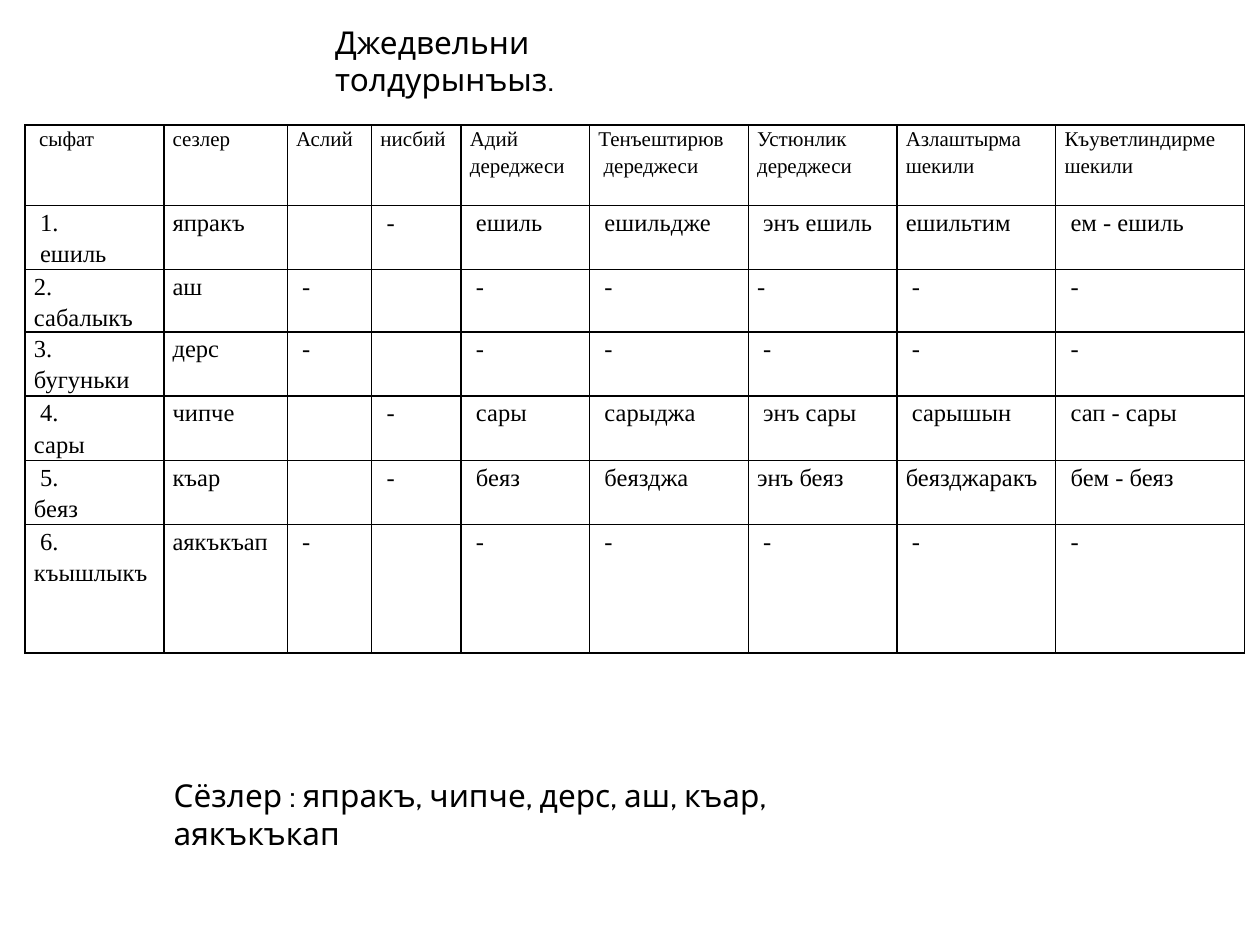
from lxml import etree
from pptx import Presentation
from pptx.dml.color import RGBColor
from pptx.enum.text import MSO_ANCHOR, MSO_AUTO_SIZE, PP_ALIGN
from pptx.oxml.ns import qn
from pptx.util import Inches, Pt

BLACK = RGBColor(0, 0, 0)
LEFT, TOP = PP_ALIGN.LEFT, MSO_ANCHOR.TOP
NO_AUTOFIT = MSO_AUTO_SIZE.NONE
PROMPT_FONT, TABLE_FONT = "Cabin", "Times New Roman"

COLUMN_WIDTHS = [1.1, 0.98, 0.67, 0.71, 1.02, 1.26, 1.18, 1.26, 1.5]
ROW_HEIGHTS = [0.64, 0.51, 0.49, 0.51, 0.51, 0.51, 1.02]
ADJECTIVE_ROWS = [
    [" сыфат", "сезлер", "Аслий", "нисбий", "Адий дереджеси",
     "Тенъештирюв\n дереджеси", "Устюнлик\nдереджеси",
     "Азлаштырма\nшекили", "Къуветлиндирме\nшекили"],
    [" 1.\n ешиль", "япракъ", "", " -", " ешиль", " ешильдже",
     " энъ ешиль", "ешильтим", " ем - ешиль"],
    ["2.\nсабалыкъ", "аш", " -", "", " -", " -", "-", " -", " -"],
    ["3.\nбугуньки", "дерс", " -", "", " -", " -", " -", " -", " -"],
    [" 4.\nсары", "чипче", "", " -", " сары", " сарыджа",
     " энъ сары", " сарышын", " сап - сары"],
    [" 5.\nбеяз", "къар", "", " -", " беяз", " беязджа",
     "энъ беяз", "беязджаракъ", " бем - беяз"],
    [" 6.\nкъышлыкъ", "аякъкъап", " -", "", " -", " -", " -", " -", " -"],
]


def style_paragraph(paragraph, font_name, size):
    paragraph.alignment = LEFT
    paragraph.font.name = font_name
    paragraph.font.size = Pt(size)
    paragraph.font.color.rgb = BLACK


def write_prompt(shape, text):
    frame = shape.text_frame
    frame.text = text
    frame.word_wrap = True
    frame.auto_size = NO_AUTOFIT
    frame.vertical_anchor = TOP
    style_paragraph(frame.paragraphs[0], PROMPT_FONT, 18)


def add_borders(cell):
    properties = cell._tc.get_or_add_tcPr()
    for side in ("a:lnL", "a:lnR", "a:lnT", "a:lnB"):
        line = etree.SubElement(properties, qn(side), w=str(Pt(1)))
        fill = etree.SubElement(line, qn("a:solidFill"))
        etree.SubElement(fill, qn("a:srgbClr"), val=str(BLACK))


def fill_cell(cell, text, size):
    cell.text = text
    cell.margin_left = cell.margin_right = Inches(0.07)
    cell.margin_top = cell.margin_bottom = 0
    add_borders(cell)
    cell.fill.background()
    for paragraph in cell.text_frame.paragraphs:
        style_paragraph(paragraph, TABLE_FONT, size)
        paragraph.line_spacing = 1.15


def add_adjective_table(slide):
    table = slide.shapes.add_table(
        len(ROW_HEIGHTS), len(COLUMN_WIDTHS), Inches(0.2), Inches(0.99),
        Inches(sum(COLUMN_WIDTHS)), Inches(sum(ROW_HEIGHTS))).table
    table.first_row = table.horz_banding = False
    for column, width in zip(table.columns, COLUMN_WIDTHS):
        column.width = Inches(width)
    for index, (row, height) in enumerate(zip(table.rows, ROW_HEIGHTS)):
        row.height = Inches(height)
        for cell, text in zip(row.cells, ADJECTIVE_ROWS[index]):
            fill_cell(cell, text, 14 if index else 12)


def main():
    presentation = Presentation()
    presentation.slide_width = Inches(10)
    presentation.slide_height = Inches(7.5)
    slide = presentation.slides.add_slide(presentation.slide_layouts[5])

    title = slide.shapes.title
    title.left, title.top = Inches(2.56), Inches(0.13)
    title.width, title.height = Inches(3.4), Inches(0.4)
    write_prompt(title, "Джедвельни толдурынъыз.")

    add_adjective_table(slide)

    word_list = slide.shapes.add_textbox(
        Inches(1.28), Inches(6.11), Inches(6.25), Inches(0.4))
    write_prompt(word_list,
                 "Сёзлер : япракъ, чипче, дерс, аш, къар, аякъкъкап")

    presentation.save("out.pptx")


if __name__ == "__main__":
    main()
